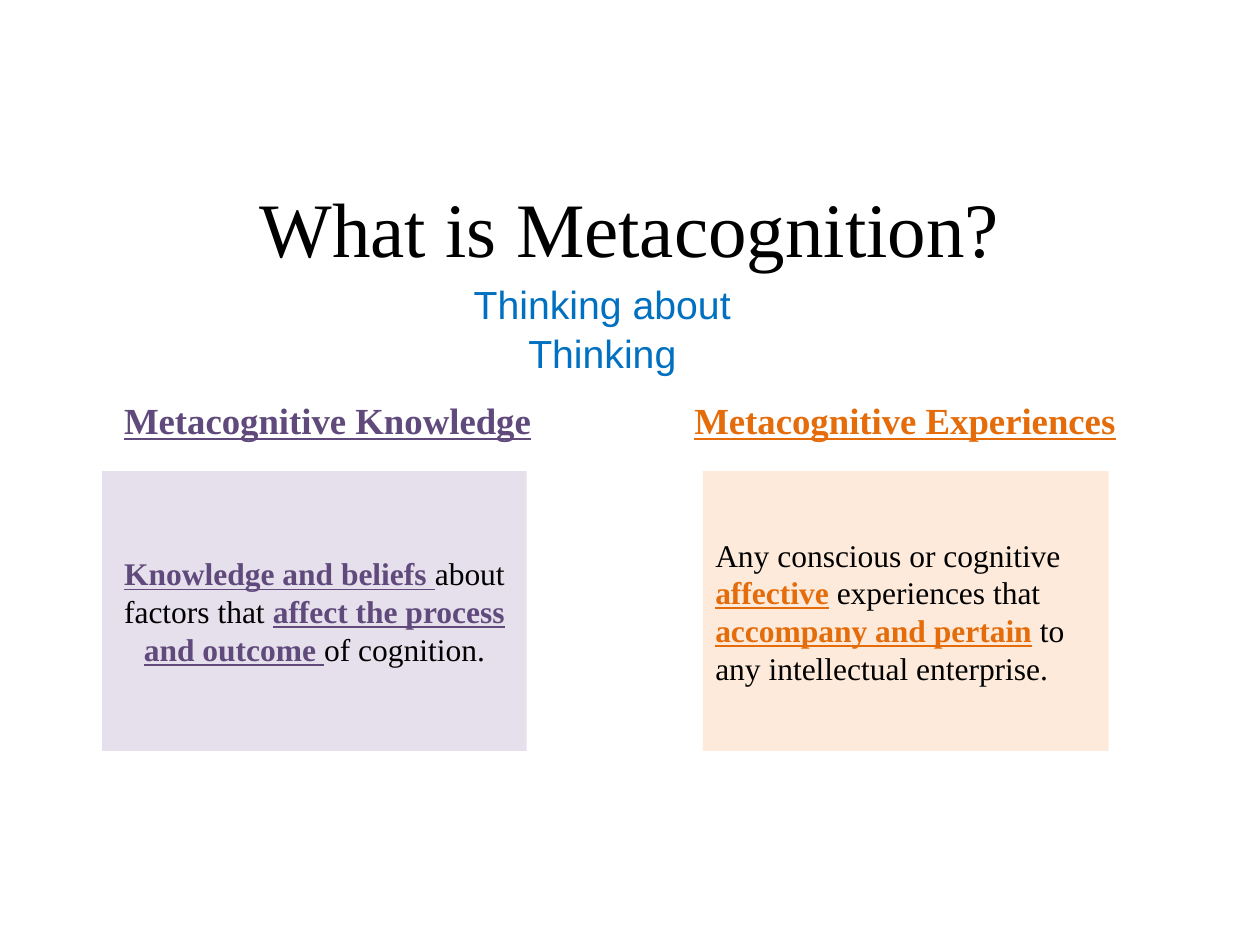
import pptx
import pptx.util
import pptx.dml.color
import pptx.enum.shapes
import pptx.enum.text
from lxml import etree

Cm, Pt = pptx.util.Cm, pptx.util.Pt
Align = pptx.enum.text.PP_ALIGN
Anchor = pptx.enum.text.MSO_ANCHOR
BLACK, BLUE, PURPLE, ORANGE = "000000", "0070C0", "604A7B", "E46C0A"
LILAC, PEACH = "E6E0EC", "FDEADA"


def color(hex_string):
    return pptx.dml.color.RGBColor.from_string(hex_string)


class ConceptSlide:
    serif = "Times New Roman"
    sans = "Arial"

    def __init__(self, deck):
        self.slide = deck.slides.add_slide(deck.slide_layouts[1])

    def place(self, shape, at):
        shape.left, shape.top, shape.width, shape.height = map(Cm, at)

    def add_text(self, shape, runs, size, align=Align.CENTER, font=None, anchor=Anchor.TOP):
        """Each run is (text, color, emphasized)."""
        frame = shape.text_frame
        frame.word_wrap = True
        frame.auto_size = pptx.enum.text.MSO_AUTO_SIZE.NONE
        frame.vertical_anchor = anchor
        paragraph = frame.paragraphs[0]
        paragraph.alignment = align
        paragraph.space_before = Pt(0)
        for text, tint, emphasized in runs:
            run = paragraph.add_run()
            run.text = text
            run.font.name = font or self.serif
            run.font.size = Pt(size)
            run.font.color.rgb = color(tint)
            run.font.bold = run.font.underline = emphasized
        return paragraph

    def title(self, text, at):
        heading = self.slide.shapes.title
        self.place(heading, at)
        self.add_text(heading, [(text, BLACK, False)], 44, anchor=Anchor.MIDDLE)

    def subtitle(self, text, at):
        body = self.slide.placeholders[1]
        self.place(body, at)
        paragraph = self.add_text(body, [(text, BLUE, False)], 22.4, font=self.sans)
        paragraph.line_spacing = 1.04
        # No bullet or hanging indent
        properties = paragraph._p.get_or_add_pPr()
        properties.set("marL", "0")
        properties.set("indent", "0")
        etree.SubElement(properties, pptx.oxml.ns.qn("a:buNone"))

    def heading(self, text, tint, at):
        label = self.slide.shapes.add_textbox(*map(Cm, at))
        self.add_text(label, [(text, tint, True)], 21)

    def panel(self, runs, fill, at, align):
        panel = self.slide.shapes.add_shape(
            pptx.enum.shapes.MSO_SHAPE.RECTANGLE, *map(Cm, at))
        panel.shadow.inherit = False
        panel.fill.solid()
        panel.fill.fore_color.rgb = color(fill)
        panel.line.fill.background()
        self.add_text(panel, runs, 18, align, anchor=Anchor.MIDDLE)


def main():
    deck = pptx.Presentation()
    deck.slide_width, deck.slide_height = Cm(25.4), Cm(19.05)
    concept = ConceptSlide(deck)

    # Title and definition
    concept.title("What is Metacognition?", (1.27, 3.23, 22.86, 2.69))
    concept.subtitle("Thinking about Thinking", (7.75, 5.49, 8.79, 1.47))

    # Two column headings
    heading_top, heading_height = 7.9, 1.14
    concept.heading("Metacognitive Knowledge", PURPLE,
                    (1.73, heading_top, 9.75, heading_height))
    concept.heading("Metacognitive Experiences", ORANGE,
                    (13.56, heading_top, 9.37, heading_height))

    # Explanations under the headings
    panel_top, panel_height = 9.5, 5.64
    knowledge = [
        ("Knowledge and beliefs ", PURPLE, True),
        ("about factors that ", BLACK, False),
        ("affect the process and outcome ", PURPLE, True),
        ("of cognition.", BLACK, False),
    ]
    experiences = [
        ("Any conscious or cognitive ", BLACK, False),
        ("affective", ORANGE, True),
        (" experiences that ", BLACK, False),
        ("accompany and pertain", ORANGE, True),
        (" to any intellectual enterprise.", BLACK, False),
    ]
    concept.panel(knowledge, LILAC, (2.06, panel_top, 8.56, panel_height), Align.CENTER)
    concept.panel(experiences, PEACH, (14.17, panel_top, 8.18, panel_height), Align.LEFT)

    deck.save("out.pptx")


if __name__ == "__main__":
    main()
